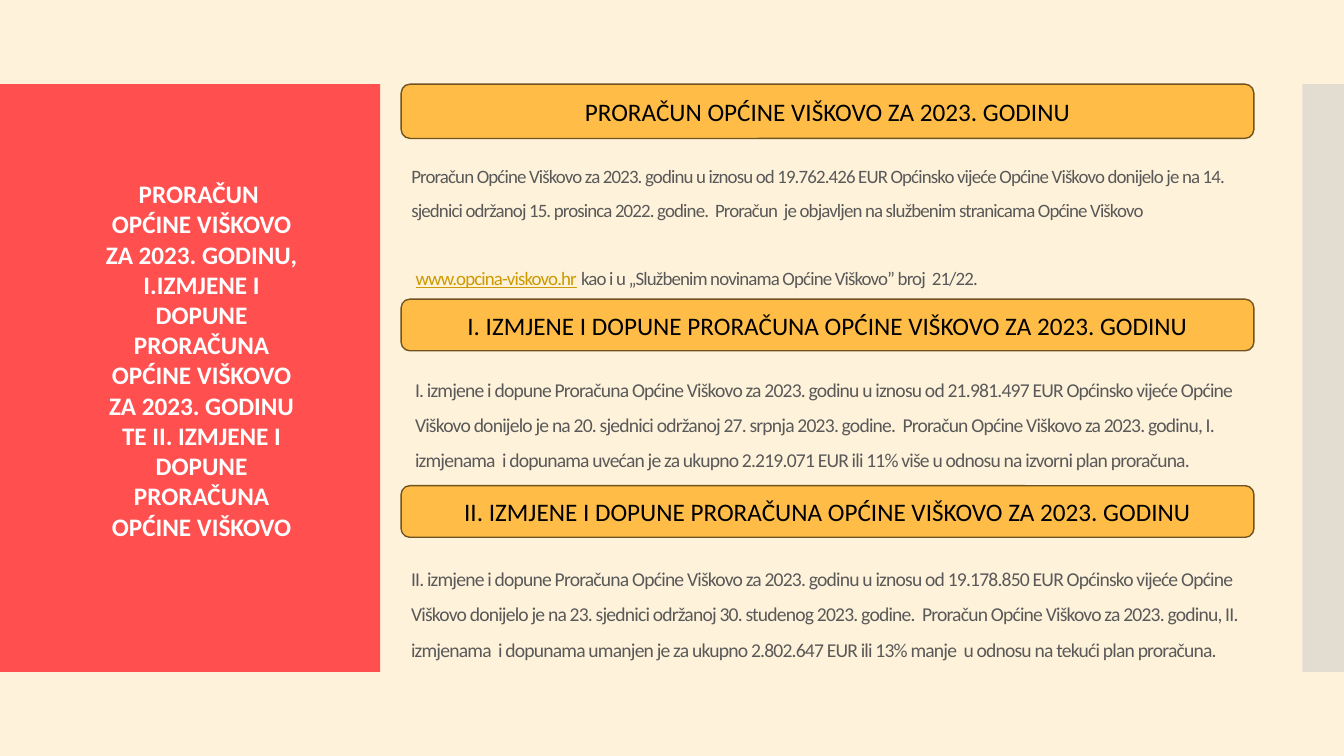
from lxml.etree import SubElement
from pptx import Presentation
from pptx.dml.color import RGBColor
from pptx.enum.shapes import MSO_SHAPE
from pptx.enum.text import MSO_ANCHOR, MSO_AUTO_SIZE, PP_ALIGN
from pptx.oxml.ns import qn
from pptx.util import Cm, Pt

CREAM = RGBColor(0xFF, 0xF2, 0xDA)
RED = RGBColor(0xFF, 0x4F, 0x4F)
GREY = RGBColor(0xC8, 0xC8, 0xC8)
AMBER = RGBColor(0xFF, 0xBD, 0x47)
BROWN = RGBColor(0x70, 0x53, 0x1F)
GOLD = RGBColor(0xCC, 0x99, 0x00)
TEXT = RGBColor(0x59, 0x59, 0x59)
WHITE = RGBColor(0xFF, 0xFF, 0xFF)
BLACK = RGBColor(0, 0, 0)

LEFT = 10.11
BAR_WIDTH = 21.49
BAND_TOP, BAND_HEIGHT = 2.12, 14.81

BARS = [
    (BAND_TOP, 1.37, "PRORAČUN OPĆINE VIŠKOVO ZA 2023. GODINU"),
    (7.54, 1.3, "I. IZMJENE I DOPUNE PRORAČUNA OPĆINE VIŠKOVO ZA 2023. GODINU"),
    (12.24, 1.3, "II. IZMJENE I DOPUNE PRORAČUNA OPĆINE VIŠKOVO ZA 2023. GODINU"),
]
INTRO = (
    "Proračun Općine Viškovo za 2023. godinu u iznosu od 19.762.426 EUR "
    "Općinsko vijeće Općine Viškovo donijelo je na 14. sjednici održanoj "
    "15. prosinca 2022. godine.  Proračun  je objavljen na službenim "
    "stranicama Općine Viškovo"
)
AMENDMENTS = [
    (10.21, 9.09,
     "I. izmjene i dopune Proračuna Općine Viškovo za 2023. godinu u iznosu od "
     "21.981.497 EUR Općinsko vijeće Općine Viškovo donijelo je na 20. sjednici "
     "održanoj 27. srpnja 2023. godine.  Proračun Općine Viškovo za 2023. godinu, "
     "I. izmjenama  i dopunama uvećan je za ukupno 2.219.071 EUR ili 11% više "
     "u odnosu na izvorni plan proračuna."),
    (LEFT, 13.87,
     "II. izmjene i dopune Proračuna Općine Viškovo za 2023. godinu u iznosu od "
     "19.178.850 EUR Općinsko vijeće Općine Viškovo donijelo je na 23. sjednici "
     "održanoj 30. studenog 2023. godine.  Proračun Općine Viškovo za 2023. godinu, "
     "II. izmjenama  i dopunama umanjen je za ukupno 2.802.647 EUR ili 13% manje  "
     "u odnosu na tekući plan proračuna."),
]
HEADING = [
    "PRORAČUN ",
    "OPĆINE VIŠKOVO ZA 2023. GODINU, I.IZMJENE I DOPUNE PRORAČUNA OPĆINE VIŠKOVO "
    "ZA 2023. GODINU TE II. IZMJENE I DOPUNE PRORAČUNA OPĆINE VIŠKOVO",
]


class BudgetSlide:
    """Holds the text style and the slide being built."""

    font = "Calibri"
    spacing = -60

    def __init__(self, prs):
        self.s = prs.slides.add_slide(prs.slide_layouts[5])
        self.s.background.fill.solid()
        self.s.background.fill.fore_color.rgb = CREAM

    def run(self, p, text, size, color, bold=False, underline=False, tight=False):
        r = p.add_run()
        r.text = text
        r.font.name = self.font
        r.font.size = Pt(size)
        r.font.bold = bold
        r.font.underline = underline
        r.font.color.rgb = color
        if tight:
            r.font._element.set("spc", str(self.spacing))

    def shape(self, kind, x, y, w, h, fill, line=None, alpha=None):
        sp = self.s.shapes.add_shape(kind, Cm(x), Cm(y), Cm(w), Cm(h))
        sp.shadow.inherit = False
        sp.fill.solid()
        sp.fill.fore_color.rgb = fill
        if line is None:
            sp.line.fill.background()
        else:
            sp.line.color.rgb = line
            sp.line.width = Pt(1)
        if alpha is not None:
            color = sp.fill._xPr.find(qn("a:solidFill"))[0]
            SubElement(color, qn("a:alpha")).set("val", str(alpha * 1000))
        return sp

    def bar(self, y, h, text):
        sp = self.shape(MSO_SHAPE.ROUNDED_RECTANGLE, LEFT, y, BAR_WIDTH, h, AMBER, BROWN)
        tf = sp.text_frame
        tf.vertical_anchor = MSO_ANCHOR.MIDDLE
        p = tf.paragraphs[0]
        p.alignment = PP_ALIGN.CENTER
        self.run(p, text, 18, BLACK)

    def text_box(self, x, y, w, h):
        tf = self.s.shapes.add_textbox(Cm(x), Cm(y), Cm(w), Cm(h)).text_frame
        tf.word_wrap = True
        return tf

    def heading(self, lines):
        tf = self.text_box(2.26, 4.37, 5.64, 9.5)
        for i, line in enumerate(lines):
            p = tf.add_paragraph() if i else tf.paragraphs[0]
            p.alignment = PP_ALIGN.CENTER
            self.run(p, line, 18, WHITE, bold=True)

    def body(self, x, y, text):
        p = self.text_box(x, y, 21.39, 3.2).paragraphs[0]
        p.line_spacing = 1.5
        self.run(p, text, 14, TEXT, tight=True)

    def title(self, text):
        sp = self.s.shapes.title
        sp.left, sp.top, sp.width, sp.height = Cm(LEFT), Cm(3.94), Cm(21.72), Cm(3.48)
        tf = sp.text_frame
        tf.word_wrap = True
        tf.auto_size = MSO_AUTO_SIZE.NONE
        tf.vertical_anchor = MSO_ANCHOR.BOTTOM
        intro, source = tf.paragraphs[0], tf.add_paragraph()
        for p in (intro, source):
            p.alignment = PP_ALIGN.LEFT
            p.line_spacing = 1.5
        source.space_before = Pt(24.5)
        self.run(intro, text, 13.5, TEXT, tight=True)
        self.run(source, " ", 13.5, TEXT, tight=True)
        self.run(source, "www.opcina-viskovo.hr", 13.5, GOLD, underline=True, tight=True)
        self.run(source, " ", 13.5, BLACK, tight=True)
        self.run(source, "kao i u „Službenim novinama Općine Viškovo” broj  21/22.",
                 13.5, TEXT, tight=True)


def main():
    prs = Presentation()
    prs.slide_width, prs.slide_height = Cm(33.87), Cm(19.05)
    slide = BudgetSlide(prs)
    slide.shape(MSO_SHAPE.RECTANGLE, 0, BAND_TOP, 9.58, BAND_HEIGHT, RED)
    slide.shape(MSO_SHAPE.RECTANGLE, 32.82, BAND_TOP, 1.05, BAND_HEIGHT, GREY, alpha=50)
    slide.title(INTRO)
    slide.heading(HEADING)
    for bar in BARS:
        slide.bar(*bar)
    for amendment in AMENDMENTS:
        slide.body(*amendment)
    prs.save("out.pptx")


if __name__ == "__main__":
    main()
